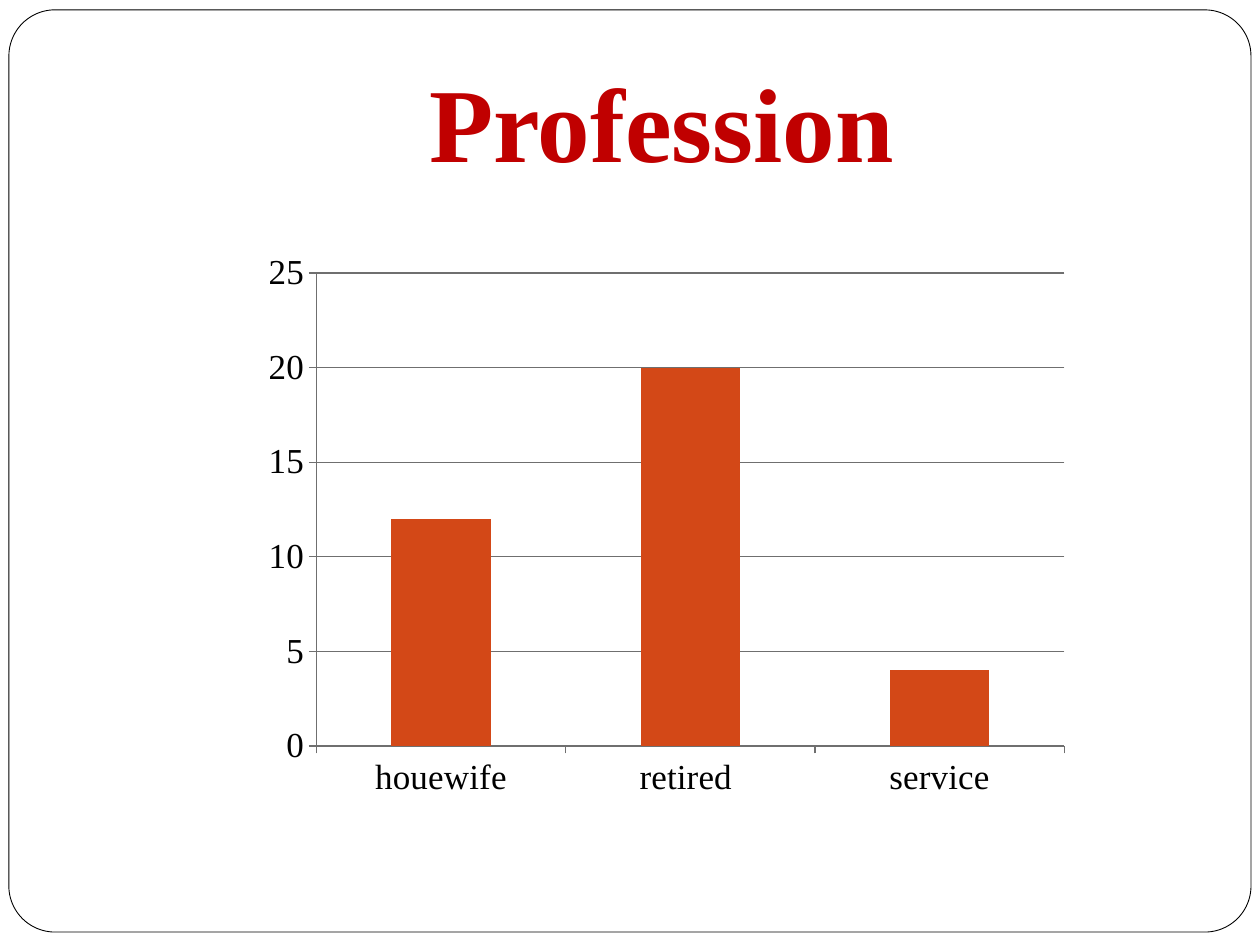
from dataclasses import dataclass

from pptx import Presentation
from pptx.chart.data import CategoryChartData
from pptx.dml.color import RGBColor
from pptx.enum.chart import XL_CHART_TYPE, XL_TICK_MARK
from pptx.enum.shapes import MSO_SHAPE
from pptx.enum.text import MSO_ANCHOR, PP_ALIGN
from pptx.util import Cm, Pt


@dataclass(frozen=True)
class Theme:
    font: str = "Times New Roman"
    paper: RGBColor = RGBColor(0xFF, 0xFF, 0xFF)
    ink: RGBColor = RGBColor(0, 0, 0)
    heading: RGBColor = RGBColor(0xC0, 0, 0)
    bar: RGBColor = RGBColor(0xD3, 0x48, 0x17)
    rule: RGBColor = RGBColor(0x6F, 0x6F, 0x6F)
    heading_size: Pt = Pt(60)
    axis_size: Pt = Pt(20)
    hairline: Pt = Pt(0.5)
    rule_width: Pt = Pt(0.75)


class SlideBuilder:
    def __init__(self, slide, theme):
        self.slide = slide
        self.theme = theme

    def frame(self, left, top, width, height, rounding):
        border = self.slide.shapes.add_shape(
            MSO_SHAPE.ROUNDED_RECTANGLE, Cm(left), Cm(top), Cm(width), Cm(height))
        border.adjustments[0] = rounding
        border.shadow.inherit = False
        border.fill.solid()
        border.fill.fore_color.rgb = self.theme.paper
        border.line.color.rgb = self.theme.ink
        border.line.width = self.theme.hairline

    def heading(self, text, left, top, width, height):
        box = self.slide.shapes.add_textbox(Cm(left), Cm(top), Cm(width), Cm(height))
        frame = box.text_frame
        frame.text = text
        frame.word_wrap = True
        frame.vertical_anchor = MSO_ANCHOR.BOTTOM
        frame.margin_bottom = Cm(0.25)
        paragraph = frame.paragraphs[0]
        paragraph.alignment = PP_ALIGN.CENTER
        self.style_font(paragraph.runs[0].font, self.theme.heading_size, self.theme.heading)
        paragraph.runs[0].font.bold = True

    def column_chart(self, series_name, counts, left, top, width, height):
        data = CategoryChartData()
        data.categories = list(counts)
        data.add_series(series_name, list(counts.values()))
        chart = self.slide.shapes.add_chart(
            XL_CHART_TYPE.COLUMN_CLUSTERED,
            Cm(left), Cm(top), Cm(width), Cm(height), data).chart
        chart.has_legend = False
        chart.has_title = False
        self.style_font(chart.font, self.theme.axis_size, self.theme.ink)

        # Bars
        plot = chart.plots[0]
        plot.gap_width = 150
        plot.vary_by_categories = False
        fill = plot.series[0].format.fill
        fill.solid()
        fill.fore_color.rgb = self.theme.bar

        # Axes and gridlines
        scale = chart.value_axis
        scale.minimum_scale, scale.maximum_scale, scale.major_unit = 0, 25, 5
        scale.has_major_gridlines = True
        self.style_rule(scale.major_gridlines.format.line)
        for axis in (chart.category_axis, scale):
            axis.major_tick_mark = XL_TICK_MARK.OUTSIDE
            axis.minor_tick_mark = XL_TICK_MARK.NONE
            self.style_font(axis.tick_labels.font, self.theme.axis_size, self.theme.ink)
            self.style_rule(axis.format.line)

    def style_font(self, font, size, color):
        font.name = self.theme.font
        font.size = size
        font.color.rgb = color

    def style_rule(self, line):
        line.color.rgb = self.theme.rule
        line.width = self.theme.rule_width


def main():
    deck = Presentation()
    deck.slide_width, deck.slide_height = Cm(25.4), Cm(19.05)
    builder = SlideBuilder(deck.slides.add_slide(deck.slide_layouts[6]), Theme())

    # Page border
    builder.frame(0.18, 0.2, 25.04, 18.59, rounding=0.05)

    # Title
    builder.heading("Profession", 2.54, 0.76, 21.59, 3.18)

    # Number of people in each profession
    professions = {"houewife": 12, "retired ": 20, "service": 4}
    builder.column_chart("Series 1", professions, 5.08, 4.88, 16.71, 11.43)

    deck.save("out.pptx")


if __name__ == "__main__":
    main()
